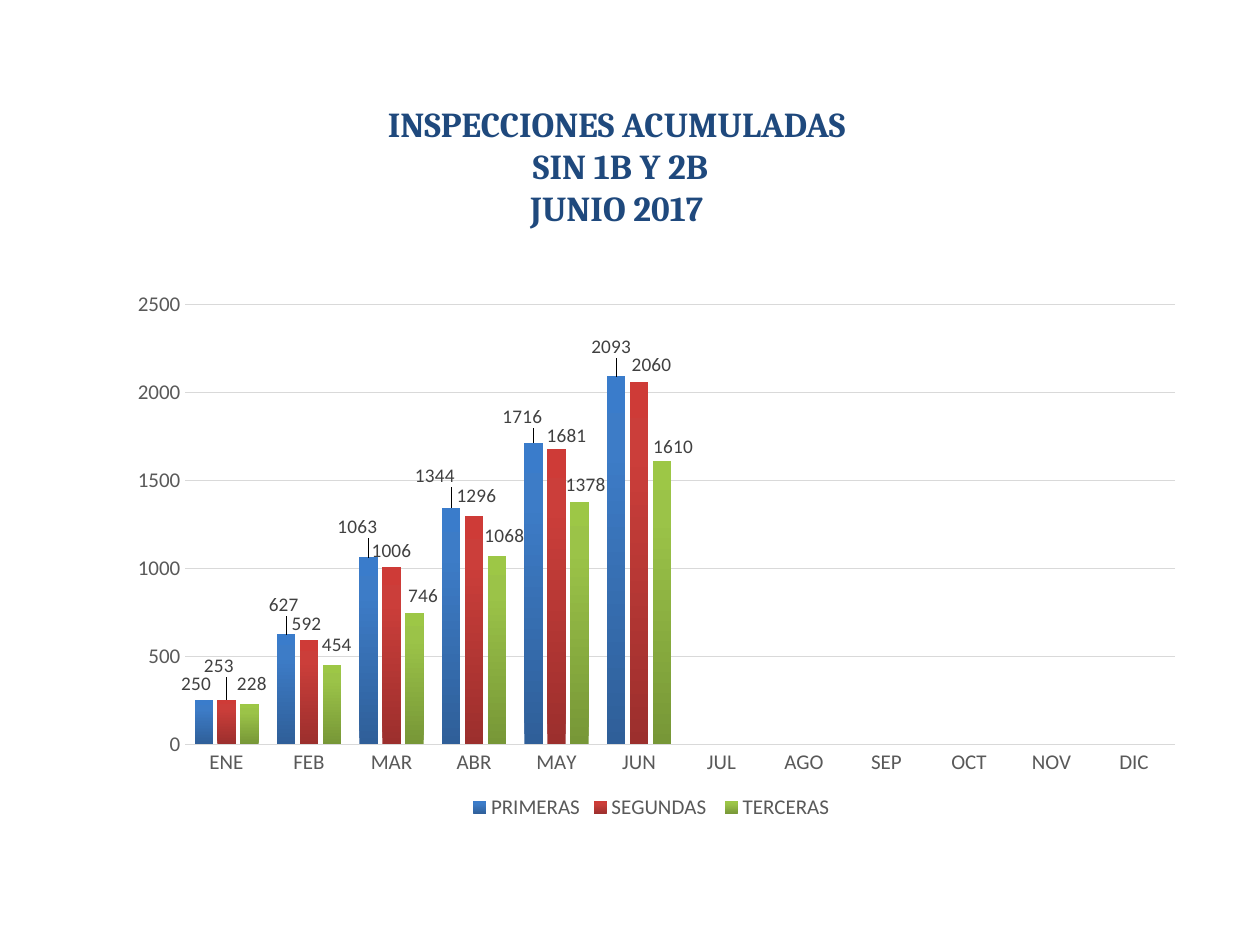
from copy import deepcopy

from pptx import Presentation
from pptx.chart.data import CategoryChartData
from pptx.dml.color import RGBColor
from pptx.enum.chart import XL_CHART_TYPE, XL_LABEL_POSITION, XL_LEGEND_POSITION, XL_TICK_MARK
from pptx.enum.text import MSO_ANCHOR, PP_ALIGN
from pptx.oxml import parse_xml
from pptx.oxml.ns import nsdecls, qn
from pptx.util import Inches, Pt

COLUMNS = XL_CHART_TYPE.COLUMN_CLUSTERED
OUTSIDE_END = XL_LABEL_POSITION.OUTSIDE_END
BOTTOM = XL_LEGEND_POSITION.BOTTOM
NO_TICK = XL_TICK_MARK.NONE
CENTER = PP_ALIGN.CENTER
TOP = MSO_ANCHOR.TOP

TITLE_LINES = ["INSPECCIONES ACUMULADAS", " SIN 1B Y 2B", "JUNIO 2017"]
MONTHS = ["ENE", "FEB", "MAR", "ABR", "MAY", "JUN",
          "JUL", "AGO", "SEP", "OCT", "NOV", "DIC"]
STOPS = [0, 0.8, 1]
CHART_WIDTH, CHART_HEIGHT = 9, 4.3

# Name, values, gradient colours, label shifts (right, down) in hundredths of an inch
SERIES = [
    ("PRIMERAS", [250, 627, 1063, 1344, 1716, 2093],
     ["2F5F99", "3D7CC7", "3A7CCB"],
     [(-6, 0), (-2, -10), (-9, -11), (-13, -12), (-9, -7), (-4, -10)]),
    ("SEGUNDAS ", [253, 592, 1006, 1296, 1681, 2060],
     ["9C2F2D", "CB3E3A", "CE3B37"],
     [(-6, -14), (-2, 0), (0, 0), (2, -3), (8, 3), (10, 0)]),
    ("TERCERAS", [228, 454, 746, 1068, 1378, 1610],
     ["779737", "9BC348", "9DC746"],
     [(2, -3), (4, -2), (7, 0), (6, -3), (5, 0), (9, 2)]),
]


def color(hex_string):
    return RGBColor.from_string(hex_string)


def set_font(font, size, hex_string, name="Calibri"):
    font.size = Pt(size)
    font.name = name
    font.color.rgb = color(hex_string)


deck = Presentation()
deck.slide_width, deck.slide_height = Inches(10), Inches(7.5)
page = deck.slides.add_slide(deck.slide_layouts[5])

title = page.shapes.title
title.left, title.top = Inches(1.69), Inches(0.76)
title.width, title.height = Inches(6.41), Inches(1.11)
frame = title.text_frame
frame.word_wrap = True
frame.vertical_anchor = TOP
for number, line in enumerate(TITLE_LINES):
    para = frame.add_paragraph() if number else frame.paragraphs[0]
    para.alignment = CENTER
    para.space_before = Pt(0)
    span = para.add_run()
    span.text = line
    span.font.bold = True
    set_font(span.font, 20, "1F497D", "Cambria")

data = CategoryChartData()
data.categories = MONTHS
for name, values, _, _ in SERIES:
    data.add_series(name, values + [None] * (len(MONTHS) - len(values)))
chart = page.shapes.add_chart(COLUMNS, Inches(0.67), Inches(2.25), Inches(CHART_WIDTH),
                              Inches(CHART_HEIGHT), data).chart
chart.has_title = False
set_font(chart.font, 10, "000000")
chart.has_legend = True
chart.legend.position = BOTTOM
chart.legend.include_in_layout = False
set_font(chart.legend.font, 12, "595959")

months_axis, count_axis = chart.category_axis, chart.value_axis
for axis in (months_axis, count_axis):
    axis.major_tick_mark = axis.minor_tick_mark = NO_TICK
    set_font(axis.tick_labels.font, 12, "595959")
months_axis.format.line.color.rgb = color("D9D9D9")
months_axis.format.line.width = Pt(1)
count_axis.format.line.fill.background()
count_axis.minimum_scale, count_axis.maximum_scale = 0, 2500
count_axis.major_unit = 500
grid = count_axis.major_gridlines.format.line
grid.color.rgb = color("D9D9D9")
grid.width = Pt(0.75)

plot = chart.plots[0]
plot.gap_width, plot.overlap = 100, -24
plot.vary_by_categories = False

for series, (_, _, shades, shifts) in zip(plot.series, SERIES):
    fill = series.format.fill
    fill.gradient()
    fill.gradient_angle = 90
    stop_list = series._element.find(".//" + qn("a:gsLst"))
    stop_list.append(deepcopy(stop_list[-1]))
    for stop, position, shade in zip(fill.gradient_stops, STOPS, shades):
        stop.position = position
        stop.color.rgb = color(shade)

    labels = series.data_labels
    labels.show_value = True
    labels.position = OUTSIDE_END
    set_font(labels.font, 11, "404040")
    for index in range(len(shifts)):
        label = series.points[index].data_label
        label.position = OUTSIDE_END
        set_font(label.font, 11, "404040")
    for node, (right, down) in zip(series._element.iter(qn("c:dLbl")), shifts):
        x, y = right / 100 / CHART_WIDTH, down / 100 / CHART_HEIGHT
        node.insert(1, parse_xml(
            f'<c:layout {nsdecls("c")}><c:manualLayout><c:x val="{x:.4f}"/>'
            f'<c:y val="{y:.4f}"/></c:manualLayout></c:layout>'))

plot_area = chart._chartSpace.find(".//" + qn("c:plotArea"))
for layout in plot_area.findall(qn("c:layout")):
    plot_area.remove(layout)
plot_area.insert(0, parse_xml(
    f'<c:layout {nsdecls("c")}><c:manualLayout><c:layoutTarget val="inner"/>'
    '<c:xMode val="edge"/><c:yMode val="edge"/><c:x val="0.089"/><c:y val="0.039"/>'
    '<c:w val="0.873"/><c:h val="0.812"/></c:manualLayout></c:layout>'))

deck.save("out.pptx")
